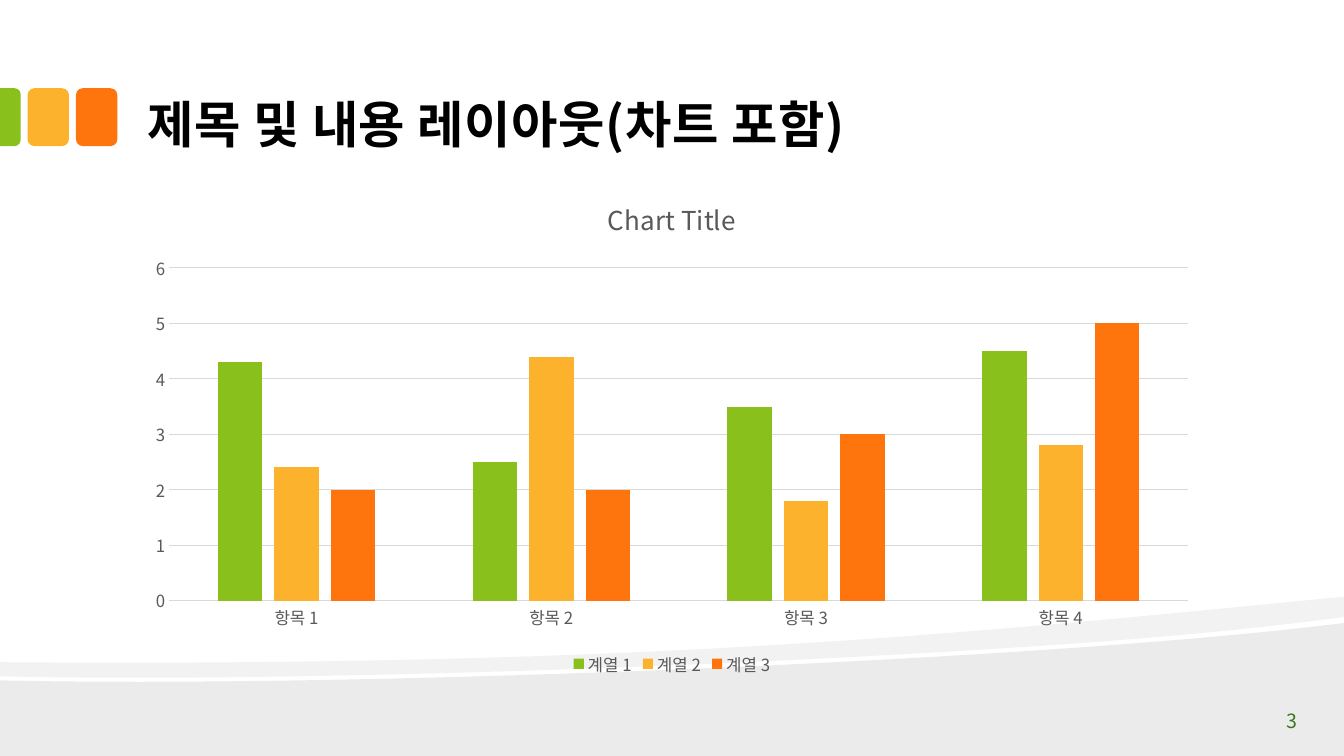
from dataclasses import dataclass
from typing import Any

from lxml.etree import SubElement
from pptx import Presentation
from pptx.chart.data import CategoryChartData
from pptx.dml.color import RGBColor
from pptx.enum.chart import (
    XL_CHART_TYPE as ChartType,
    XL_LEGEND_POSITION as LegendPosition,
    XL_TICK_MARK as TickMark,
)
from pptx.enum.shapes import MSO_SHAPE as Preset
from pptx.enum.text import MSO_ANCHOR as Anchor, PP_ALIGN as Align
from pptx.oxml.ns import qn
from pptx.util import Inches, Pt

Point = tuple[float, float]

FONT = "Noto Sans CJK KR"
COLORS = {
    "green": "89C01C", "amber": "FCB22C", "orange": "FE750E",
    "black": "000000", "label": "595959", "grid": "D9D9D9", "number": "3E7520",
}
SLIDE_WIDTH, SLIDE_HEIGHT = Inches(13.33), Inches(7.5)


# Every length is a percentage of the slide's width or height
def across(share: float) -> int:
    return round(SLIDE_WIDTH * share / 100)


def down(share: float) -> int:
    return round(SLIDE_HEIGHT * share / 100)


@dataclass(frozen=True)
class Area:
    left: float
    top: float
    width: float
    height: float

    def box(self) -> tuple[int, int, int, int]:
        return across(self.left), down(self.top), across(self.width), down(self.height)


@dataclass(frozen=True)
class Wave:
    opacity: int
    start: Point
    steps: list[tuple[Point, ...]]  # one point is a line, three are a curve


@dataclass(frozen=True)
class Caption:
    text: str
    area: Area
    anchor: Any
    align: Any
    font: dict[str, Any]
    tracking: int = 0  # hundredths of a point


@dataclass(frozen=True)
class Series:
    name: str
    values: tuple[float, ...]
    color: str


WAVES = [
    Wave(8, (100, 82.4), [
        ((100, 100),), ((0, 100),), ((0, 90),),
        ((26.41, 91.07), (78.17, 87.33), (100, 82.4)),
    ]),
    Wave(5, (100, 78.93), [
        ((100, 81.6),),
        ((94.15, 83.07), (86.2, 84.4), (77.19, 85.47)),
        ((52.36, 88.4), (19.35, 90.27), (0, 89.47)),
        ((0, 87.6),),
        ((48.91, 88.27), (72.84, 83.6), (100, 78.93)),
    ]),
]
TILE_TOP, TILE_WIDTH, TILE_HEIGHT = 11.67, 3.08, 7.66
TILE_LEFT, TILE_PITCH, EDGE_TILE_WIDTH = 2.05, 3.6, 1.54
CAPTIONS = [
    Caption("제목 및 내용 레이아웃(차트 포함)", Area(10, 2.27, 80, 18.93),
            Anchor.BOTTOM, Align.LEFT,
            {"size": Pt(36), "bold": True, "color": "black"}, tracking=40),
    Caption("3", Area(90.85, 94, 6.68, 2.67), Anchor.MIDDLE, Align.RIGHT,
            {"size": Pt(14), "color": "number"}),
]
CHART_AREA = Area(10, 23.33, 80, 66.67)
CATEGORIES = [f"항목 {number}" for number in range(1, 5)]
SERIES = [
    Series("계열 1", (4.3, 2.5, 3.5, 4.5), "green"),
    Series("계열 2", (2.4, 4.4, 1.8, 2.8), "amber"),
    Series("계열 3", (2, 2, 3, 5), "orange"),
]
LABEL_FONT = {"size": Pt(12), "bold": False, "color": "label"}


def apply(target: Any, values: dict[str, Any]) -> None:
    for attribute, value in values.items():
        setattr(target, attribute, value)


def rgb(color: str) -> RGBColor:
    return RGBColor.from_string(COLORS[color])


def style_font(font: Any, values: dict[str, Any]) -> None:
    apply(font, {"name": FONT} | {k: v for k, v in values.items() if k != "color"})
    font.color.rgb = rgb(values["color"])
    SubElement(font._element, qn("a:ea")).set("typeface", FONT)


def style_line(line: Any) -> None:
    line.color.rgb = rgb("grid")
    line.width = Pt(0.75)


def paint(shape: Any, color: str, opacity: int = 100) -> None:
    shape.shadow.inherit = False
    shape.fill.solid()
    shape.fill.fore_color.rgb = rgb(color)
    shape.line.fill.background()
    if opacity < 100:
        fill_color = shape.fill._xPr.find(qn("a:solidFill"))[0]
        SubElement(fill_color, qn("a:alpha")).set("val", str(opacity * 1000))


def draw_wave(shapes: Any, wave: Wave) -> None:
    corners = [(across(x), down(y)) for step in wave.steps for x, y in step]
    builder = shapes.build_freeform(across(wave.start[0]), down(wave.start[1]))
    builder.add_line_segments(corners, close=True)
    shape = builder.convert_to_shape()
    # Gather the three points of each curve into one curved segment
    segments = iter(list(shape._element.iter(qn("a:lnTo"))))
    for step in wave.steps:
        first, *others = [next(segments) for _ in step]
        if others:
            first.tag = qn("a:cubicBezTo")
            for segment in others:
                first.append(segment[0])
                segment.getparent().remove(segment)
    paint(shape, "black", wave.opacity)


def draw_tiles(shapes: Any) -> None:
    for position, color in enumerate(("amber", "orange")):
        area = Area(TILE_LEFT + position * TILE_PITCH, TILE_TOP, TILE_WIDTH, TILE_HEIGHT)
        paint(shapes.add_shape(Preset.ROUNDED_RECTANGLE, *area.box()), color)
    # The tile at the slide's edge is turned, so its sides swap about its centre
    left, top, width, height = Area(0, TILE_TOP, EDGE_TILE_WIDTH, TILE_HEIGHT).box()
    shift = (height - width) // 2
    edge_tile = shapes.add_shape(
        Preset.ROUND_2_SAME_RECTANGLE, left - shift, top + shift, height, width)
    edge_tile.rotation = 90
    edge_tile.adjustments[0] = 0.292
    paint(edge_tile, "green")


def draw_caption(shapes: Any, caption: Caption) -> None:
    frame = shapes.add_textbox(*caption.area.box()).text_frame
    apply(frame, {
        "word_wrap": True, "vertical_anchor": caption.anchor,
        "margin_left": Inches(0.13), "margin_right": Inches(0.13),
        "margin_top": Inches(0.07), "margin_bottom": Inches(0.07),
    })
    paragraph = frame.paragraphs[0]
    paragraph.alignment = caption.align
    run = paragraph.add_run()
    run.text = caption.text
    style_font(run.font, caption.font)
    if caption.tracking:
        run.font._element.set("spc", str(caption.tracking))


def draw_chart(shapes: Any) -> None:
    data = CategoryChartData()
    data.categories = CATEGORIES
    for series in SERIES:
        data.add_series(series.name, series.values)
    chart = shapes.add_chart(ChartType.COLUMN_CLUSTERED, *CHART_AREA.box(), data).chart
    style_font(chart.font, {"size": Pt(10), "color": "black"})
    # Heading and legend
    heading = chart.chart_title.text_frame.paragraphs[0].add_run()
    heading.text = "Chart Title"
    style_font(heading.font, LABEL_FONT | {"size": Pt(18.6)})
    chart.has_legend = True
    apply(chart.legend, {"position": LegendPosition.BOTTOM, "include_in_layout": False})
    style_font(chart.legend.font, LABEL_FONT)
    # Columns
    plot = chart.plots[0]
    apply(plot, {"gap_width": 219, "overlap": -27, "vary_by_categories": False})
    for columns, series in zip(plot.series, SERIES):
        columns.format.fill.solid()
        columns.format.fill.fore_color.rgb = rgb(series.color)
    # Axes
    categories, scale = chart.category_axis, chart.value_axis
    for axis in (categories, scale):
        apply(axis, {"major_tick_mark": TickMark.NONE, "minor_tick_mark": TickMark.NONE})
        style_font(axis.tick_labels.font, LABEL_FONT)
    apply(scale, {"minimum_scale": 0, "maximum_scale": 6, "major_unit": 1})
    style_line(categories.format.line)
    style_line(scale.major_gridlines.format.line)
    scale.format.line.fill.background()


deck = Presentation()
apply(deck, {"slide_width": SLIDE_WIDTH, "slide_height": SLIDE_HEIGHT})
slide_shapes = deck.slides.add_slide(deck.slide_layouts[6]).shapes
for band in WAVES:
    draw_wave(slide_shapes, band)
draw_tiles(slide_shapes)
draw_chart(slide_shapes)
for label in CAPTIONS:
    draw_caption(slide_shapes, label)
deck.save("out.pptx")
